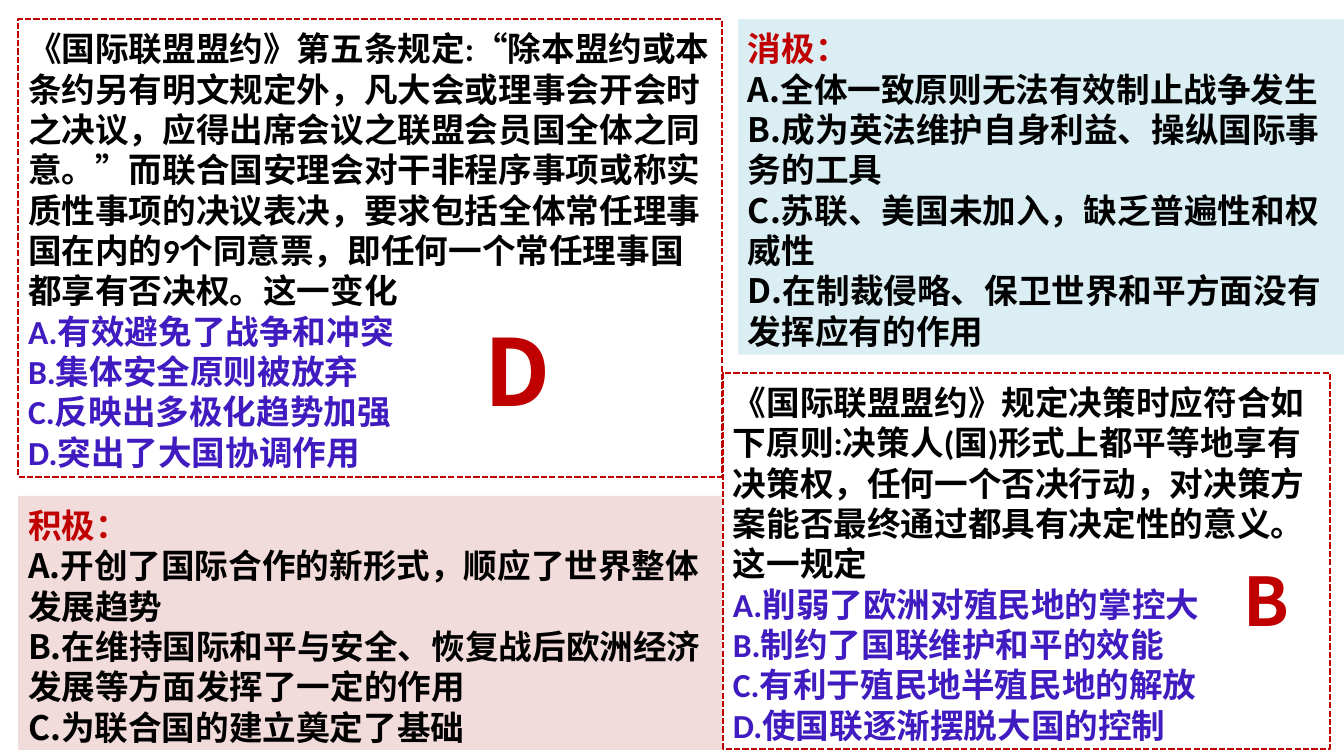
from pptx import Presentation
from pptx.dml.color import RGBColor
from pptx.enum.dml import MSO_LINE
from pptx.enum.shapes import MSO_SHAPE
from pptx.enum.text import MSO_ANCHOR, PP_ALIGN
from pptx.oxml.ns import qn
from pptx.util import Inches, Pt

COLORS = {"ink": "000000", "red": "C00000", "option": "401BC0",
          "rose": "F2DCDB", "sky": "DBEEF4"}
LATIN, HAN = "Calibri", "Noto Sans CJK SC"
BODY_SIZE, BODY_PITCH, ANSWER_PITCH = 24, 28.8, 1.27

# Content: place (left, top, width, height), first paragraph, lettered options
QUESTIONS = [
    ((0.18, 0.19, 6.98, 4.54),
     "《国际联盟盟约》第五条规定:“除本盟约或本条约另有明文规定外，凡大会或理事会开会时之决议，"
     "应得出席会议之联盟会员国全体之同意。”而联合国安理会对干非程序事项或称实质性事项的决议表决，"
     "要求包括全体常任理事国在内的9个同意票，即任何一个常任理事国都享有否决权。这一变化",
     ["有效避免了战争和冲突", "集体安全原则被放弃", "反映出多极化趋势加强", "突出了大国协调作用"]),
    ((7.17, 3.7, 6.02, 3.73),
     "《国际联盟盟约》规定决策时应符合如下原则:决策人(国)形式上都平等地享有决策权，"
     "任何一个否决行动，对决策方案能否最终通过都具有决定性的意义。这一规定",
     ["削弱了欧洲对殖民地的掌控大", "制约了国联维护和平的效能",
      "有利于殖民地半殖民地的解放", "使国联逐渐摆脱大国的控制"]),
]
ASSESSMENTS = [
    ((0.18, 4.92, 6.98, 2.52), "rose", "积极：",
     ["开创了国际合作的新形式，顺应了世界整体发展趋势",
      "在维持国际和平与安全、恢复战后欧洲经济发展等方面发挥了一定的作用",
      "为联合国的建立奠定了基础"]),
    ((7.32, 0.19, 6.01, 3.33), "sky", "消极：",
     ["全体一致原则无法有效制止战争发生", "成为英法维护自身利益、操纵国际事务的工具",
      "苏联、美国未加入，缺乏普遍性和权威性", "在制裁侵略、保卫世界和平方面没有发挥应有的作用"]),
]
ANSWERS = [((4.71, 3, 0.75, 1.21), "D", 66), ((12.23, 5.45, 0.75, 0.91), "B", 48)]

FRAME_FORMAT = {"word_wrap": True, "vertical_anchor": MSO_ANCHOR.TOP,
                "margin_left": Inches(0.1), "margin_right": Inches(0.1),
                "margin_bottom": Inches(0.05)}


def rgb(name):
    return RGBColor.from_string(COLORS[name])


def apply(target, values):
    for key, value in values.items():
        setattr(target, key, value)


def write(box, lines, latin, size, pitch, top):
    """Fill a box with (text, colour) lines."""
    frame = box.text_frame
    apply(frame, {**FRAME_FORMAT, "margin_top": Inches(top)})
    for number, (text, color) in enumerate(lines):
        paragraph = frame.add_paragraph() if number else frame.paragraphs[0]
        apply(paragraph, {"alignment": PP_ALIGN.LEFT, "line_spacing": Pt(pitch)})
        run = paragraph.add_run()
        run.text = text
        apply(run.font, {"name": latin, "size": Pt(size), "bold": True})
        run.font.color.rgb = rgb(color)
        properties = run.font._element
        properties.set("lang", "zh-CN")
        east_asian = properties.makeelement(qn("a:ea"), {"typeface": HAN})
        properties.find(qn("a:latin")).addnext(east_asian)


def add_panel(place, heading, options, latin, fill=None):
    """Dashed box for a question, or filled box for an assessment."""
    panel = slide.shapes.add_shape(MSO_SHAPE.RECTANGLE, *map(Inches, place))
    panel.shadow.inherit = False
    if fill:
        panel.fill.solid()
        panel.fill.fore_color.rgb = rgb(fill)
        panel.line.fill.background()
    else:
        panel.fill.background()
        panel.line.color.rgb = rgb("red")
        apply(panel.line, {"width": Pt(1.5), "dash_style": MSO_LINE.SQUARE_DOT})
    heading_color, option_color = ("red", "ink") if fill else ("ink", "option")
    lines = [(heading, heading_color)]
    lines += [(f"{letter}.{option}", option_color) for letter, option in zip("ABCD", options)]
    write(panel, lines, latin, BODY_SIZE, BODY_PITCH, 0.09)


presentation = Presentation()
apply(presentation, {"slide_width": Inches(13.33), "slide_height": Inches(7.5)})
slide = presentation.slides.add_slide(presentation.slide_layouts[6])

# Questions
for place, stem, options in QUESTIONS:
    add_panel(place, stem, options, LATIN)

# Assessments of the League
for place, fill, heading, points in ASSESSMENTS:
    add_panel(place, heading, points, HAN, fill)

# Answers
for place, letter, size in ANSWERS:
    answer = slide.shapes.add_textbox(*map(Inches, place))
    write(answer, [(letter, "red")], HAN, size, size * ANSWER_PITCH, 0.05)

presentation.save("out.pptx")
